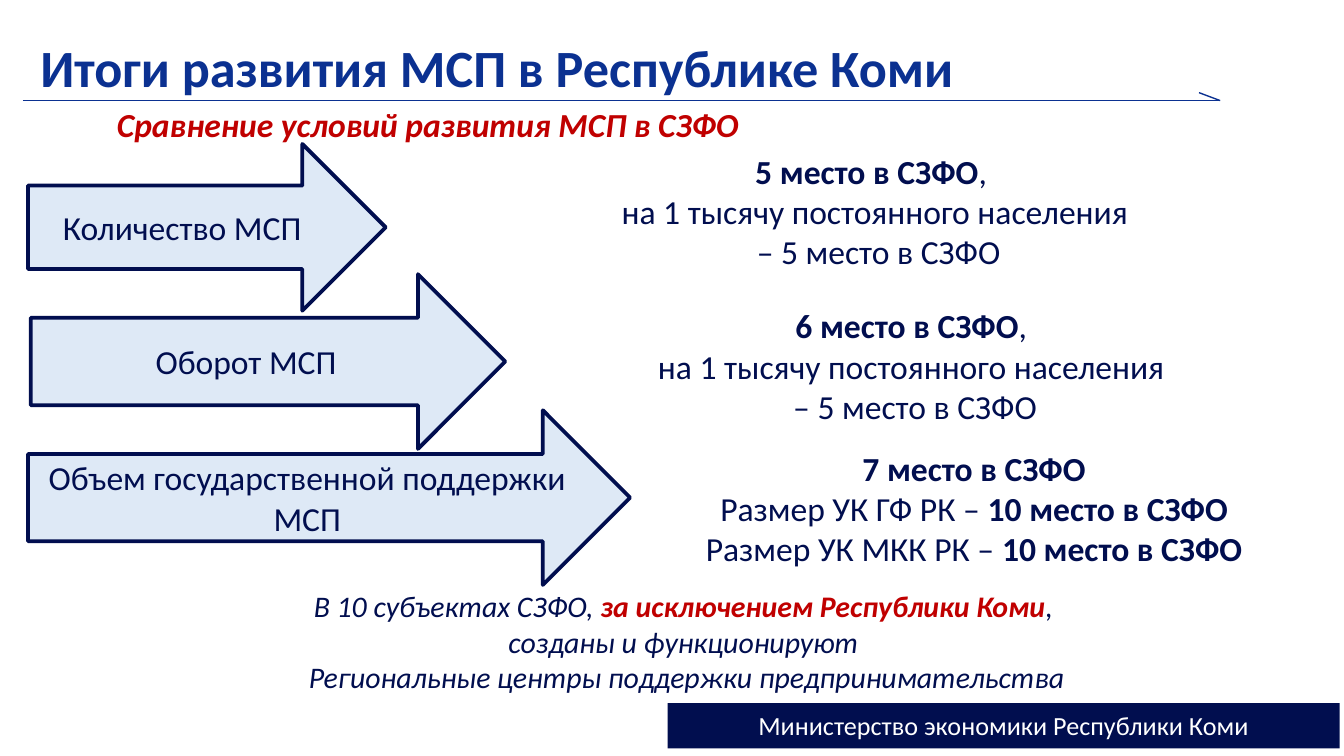
from lxml.etree import SubElement
from pptx import Presentation
from pptx.dml.color import RGBColor
from pptx.enum.shapes import MSO_CONNECTOR, MSO_SHAPE
from pptx.enum.text import MSO_ANCHOR, MSO_AUTO_SIZE, PP_ALIGN
from pptx.oxml.ns import qn
from pptx.util import Cm, Pt

NAVY = RGBColor(0x01, 0x0E, 0x4F)
BLUE = RGBColor(0x0B, 0x31, 0x91)
PALE = RGBColor(0xDE, 0xE9, 0xF6)
RED = RGBColor(0xC0, 0x00, 0x00)
WHITE = RGBColor(0xFF, 0xFF, 0xFF)

PLAIN = {"name": "Calibri", "size": Pt(18), "bold": False,
         "italic": False, "color": NAVY}
BOLD = {**PLAIN, "bold": True}
HEAD = {**BOLD, "size": Pt(28), "color": BLUE}
SUB = {**BOLD, "italic": True, "color": RED}
NOTE = {**PLAIN, "size": Pt(16), "italic": True}
ALERT = {**SUB, "size": Pt(16)}
FOOT = {**PLAIN, "size": Pt(14), "color": WHITE}

# Label, arrow box, rank lines, rank box (boxes in cm)
RANKS = [
    ("Количество МСП ", (0.53, 2.72, 6.76, 3.15),
     [[("5 место в СЗФО", BOLD), (", ", PLAIN)],
      [("на 1 тысячу постоянного населения", PLAIN)],
      [(" – 5 место в СЗФО", PLAIN)]], (8.79, 2.72, 15.49, 2.57)),
    ("Оборот МСП", (0.58, 5.18, 8.97, 3.3),
     [[("6 место в СЗФО", BOLD), (", ", PLAIN)],
      [("на 1 тысячу постоянного населения ", PLAIN)],
      [("– 5 место в СЗФО", PLAIN)]], (9.7, 5.64, 15.19, 2.57)),
    ("Объем государственной поддержки МСП", (0.53, 7.75, 11.38, 3.3),
     [[("7 место в СЗФО", BOLD)],
      [("Размер УК ГФ РК – ", PLAIN), ("10 место в СЗФО", BOLD)],
      [("Размер УК МКК РК – ", PLAIN), ("10 место в СЗФО", BOLD)]],
     (12.24, 8.33, 12.34, 2.57)),
]
SUMMARY = [
    [("В 10 субъектах СЗФО, ", NOTE),
     ("за исключением Республики Коми", ALERT), (", ", NOTE)],
    [("созданы и функционируют ", NOTE)],
    [("Региональные центры поддержки предпринимательства", NOTE)],
]


def cms(box):
    return [Cm(value) for value in box]


def write(shape, lines, align=PP_ALIGN.CENTER, anchor=MSO_ANCHOR.TOP):
    """Fill a shape with lines, each a list of (text, format) runs."""
    frame = shape.text_frame
    frame.word_wrap = True
    frame.auto_size = MSO_AUTO_SIZE.NONE
    frame.vertical_anchor = anchor
    for index, line in enumerate(lines):
        para = frame.add_paragraph() if index else frame.paragraphs[0]
        para.alignment = align
        for text, style in line:
            run = para.add_run()
            run.text = text
            for key, value in style.items():
                if key == "color":
                    run.font.color.rgb = value
                else:
                    setattr(run.font, key, value)


def add_title(slide, text, box):
    title = slide.shapes.title
    title.left, title.top, title.width, title.height = cms(box)
    write(title, [[(text, HEAD)]], PP_ALIGN.LEFT)


def add_text(slide, lines, box, align=PP_ALIGN.CENTER):
    write(slide.shapes.add_textbox(*cms(box)), lines, align)


def add_block(slide, kind, box, fill, line=None):
    block = slide.shapes.add_shape(kind, *cms(box))
    block.shadow.inherit = False
    block.fill.solid()
    block.fill.fore_color.rgb = fill
    if line is None:
        block.line.fill.background()
    else:
        block.line.color.rgb = line
        block.line.width = Pt(2)
    return block


def add_rule(slide, ends):
    rule = slide.shapes.add_connector(MSO_CONNECTOR.STRAIGHT, *cms(ends))
    rule.line.color.rgb = BLUE
    rule.line.width = Pt(0.75)
    SubElement(rule._element.spPr, qn("a:effectLst"))


def main():
    deck = Presentation()
    deck.slide_width, deck.slide_height = Cm(25.4), Cm(14.28)
    slide = deck.slides.add_slide(deck.slide_layouts[5])

    for start in ((0.43, 1.9), (22.66, 1.75)):
        add_rule(slide, (*start, 23.06, 1.9))
    add_title(slide, "Итоги развития МСП в Республике Коми",
              (0.51, 0.53, 21.41, 1.45))
    add_text(slide, [[("Сравнение условий развития МСП в СЗФО", SUB)]],
             (1.96, 1.83, 20.8, 1.02), PP_ALIGN.LEFT)

    for label, place, lines, box in RANKS:
        arrow = add_block(slide, MSO_SHAPE.RIGHT_ARROW, place, PALE, NAVY)
        write(arrow, [[(label, PLAIN)]], anchor=MSO_ANCHOR.MIDDLE)
        add_text(slide, lines, box)

    add_text(slide, SUMMARY, (2.31, 10.97, 21.34, 2.31))
    footer = add_block(slide, MSO_SHAPE.RECTANGLE,
                       (12.62, 13.28, 12.7, 0.86), NAVY)
    write(footer, [[("Министерство экономики Республики Коми", FOOT)]])
    deck.save("out.pptx")


if __name__ == "__main__":
    main()
